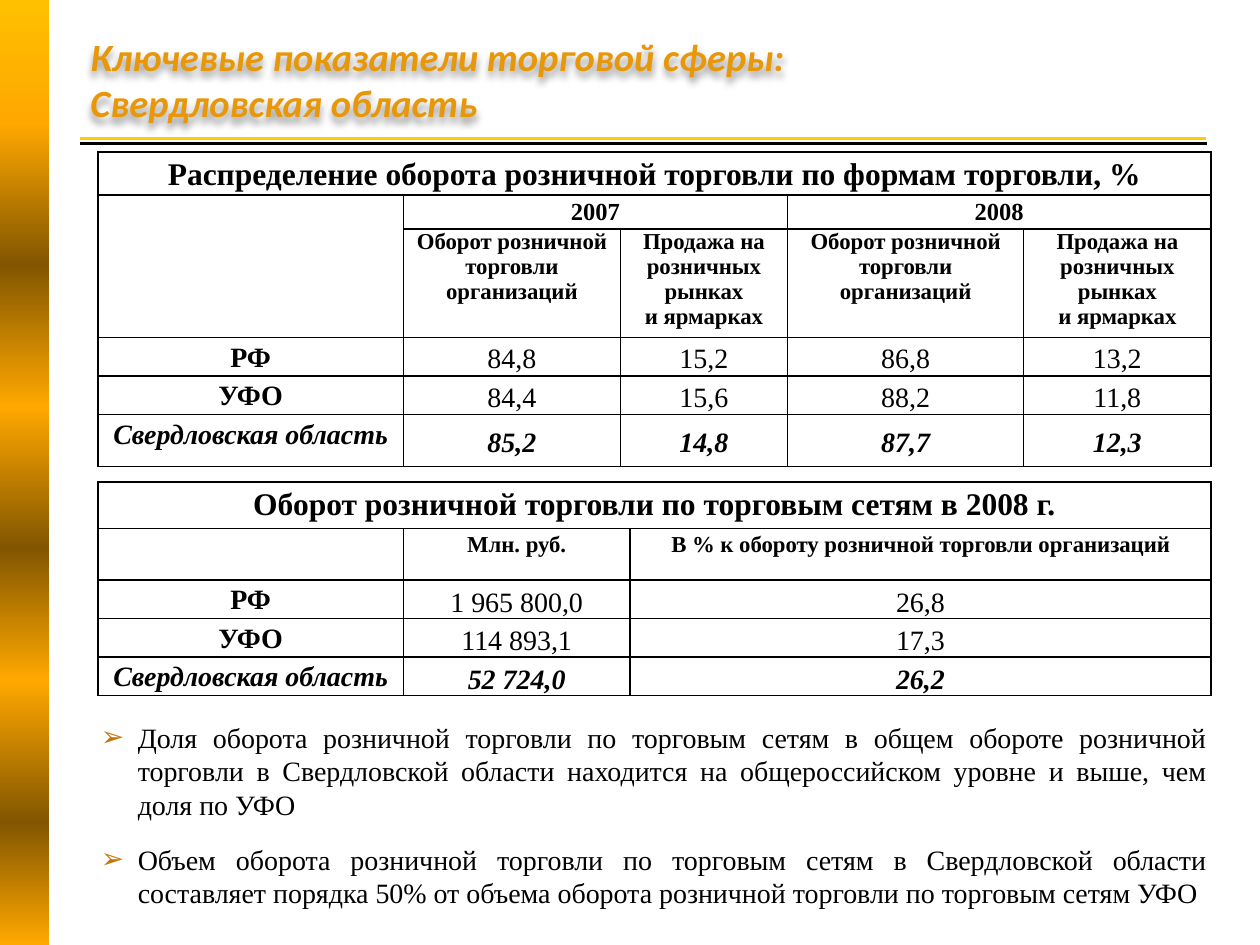
"""Build the slide on retail trade indicators of Sverdlovsk region."""
import pptx
import pptx.dml.color
import pptx.enum.shapes
import pptx.enum.text
import pptx.oxml.ns
import pptx.util
from dataclasses import dataclass
from lxml import etree

Pt = pptx.util.Pt
qn = pptx.oxml.ns.qn
rgb = pptx.dml.color.RGBColor.from_string
ANCHOR = pptx.enum.text.MSO_ANCHOR
ALIGN = pptx.enum.text.PP_ALIGN


@dataclass(frozen=True)
class Theme:
    ink: str = "000000"
    gold: str = "FFCC00"
    heading: str = "E79707"
    bullet: str = "C5750B"
    heading_font: str = "Calibri"
    text_font: str = "Times New Roman"
    heading_size: int = 22
    caption_size: int = 18
    year_size: int = 14
    column_size: int = 13
    text_size: int = 16


THEME = Theme()

HEADING = "Ключевые показатели торговой сферы: Свердловская область"
CONCLUSIONS = [
    "Доля оборота розничной торговли по торговым сетям в общем обороте розничной торговли "
    "в Свердловской области находится на общероссийском уровне и выше, чем доля по УФО",
    "Объем оборота розничной торговли по торговым сетям в Свердловской области составляет "
    "порядка 50% от объема оборота розничной торговли по торговым сетям УФО",
]
MARKETS = "Продажа на розничных рынках\vи ярмарках"
TABLES = [
    {
        "top": 87,
        "columns": [174.5, 124, 95.5, 135, 107],
        "merges": [(0, 0, 0, 4), (1, 0, 2, 0), (1, 1, 1, 2), (1, 3, 1, 4)],
        "value_anchor": ANCHOR.MIDDLE,
        "value_spacing": 1.15,
        "rows": [
            (24.5, "caption", ["Распределение оборота розничной торговли по формам торговли, %"]),
            (19.5, "year", ["", "2007", "", "2008"]),
            (62, "column", ["", "Оборот розничной торговли организаций", MARKETS,
                            "Оборот розничной торговли\vорганизаций", MARKETS]),
            (22, "region", ["РФ", "84,8", "15,2", "86,8", "13,2"]),
            (22, "region", ["УФО", "84,4", "15,6", "88,2", "11,8"]),
            (29.5, "focus", ["Свердловская область", "85,2", "14,8", "87,7", "12,3"]),
        ],
    },
    {
        "top": 275.5,
        "columns": [174.5, 129.5, 332],
        "merges": [(0, 0, 0, 2)],
        "value_anchor": ANCHOR.BOTTOM,
        "value_spacing": 1.0,
        "rows": [
            (26.5, "caption", ["Оборот розничной торговли по торговым сетям в 2008 г."]),
            (29.5, "wide_column", ["", "Млн. руб.", "В % к обороту розничной торговли организаций"]),
            (22, "region", ["РФ", "1 965 800,0", "26,8"]),
            (22, "region", ["УФО", "114 893,1", "17,3"]),
            (22, "focus", ["Свердловская область", "52 724,0", "26,2"]),
        ],
    },
]
ROW_STYLES = {
    "caption": (THEME.caption_size, 1.15),
    "year": (THEME.year_size, 1.15),
    "column": (THEME.column_size, 1.0),
    "wide_column": (THEME.column_size, 1.15),
    "region": (THEME.text_size, 1.15),
    "focus": (THEME.text_size, 1.15),
}
TABLE_LEFT = 56
RULES = [(THEME.ink, 82, 690), (THEME.gold, 79.25, 689)]
RIBBON = [(0, "FFC000"), (13, "FFA800"), (28, "825600"), (43, "FFA800"),
          (58, "825600"), (72, "FFA800"), (87, "825600"), (100, "FFA800")]


def add_color(parent, color):
    """Append a colour element and return it."""
    return etree.SubElement(parent, qn("a:srgbClr"), val=color)


def format_runs(paragraph, size, color, name, bold=False, italic=False):
    """Give every run of a paragraph the same font."""
    for run in paragraph.runs:
        run.font.size, run.font.name = Pt(size), name
        run.font.bold, run.font.italic = bold, italic
        run.font.color.rgb = rgb(color)


def place(shape, left, top, width, height):
    """Move and size a shape, in points."""
    shape.left, shape.top, shape.width, shape.height = map(Pt, (left, top, width, height))


def add_ribbon(slide):
    """Draw the gradient band along the left edge."""
    ribbon = slide.shapes.add_shape(pptx.enum.shapes.MSO_SHAPE.RECTANGLE, 0, 0, Pt(28), Pt(540))
    ribbon.shadow.inherit = False
    ribbon.line.fill.background()
    ribbon.fill.gradient()
    ribbon.fill.gradient_angle = 270
    stops = ribbon.element.spPr.find(".//" + qn("a:gsLst"))
    for stop in list(stops):
        stops.remove(stop)
    for percent, color in RIBBON:
        add_color(etree.SubElement(stops, qn("a:gs"), pos=str(percent * 1000)), color)


def add_rules(slide):
    """Draw the double rule under the heading."""
    for color, y, right in RULES:
        rule = slide.shapes.add_connector(
            pptx.enum.shapes.MSO_CONNECTOR.STRAIGHT, Pt(45.5), Pt(y), Pt(right), Pt(y))
        rule.line.color.rgb = rgb(color)
        rule.line.width = Pt(1.75)
        etree.SubElement(rule.element.spPr, qn("a:effectLst"))


def add_borders(cell):
    """Outline a cell with thin lines."""
    properties = cell._tc.get_or_add_tcPr()
    for side in ("lnL", "lnR", "lnT", "lnB"):
        border = etree.SubElement(properties, qn("a:" + side), w=str(Pt(1)))
        add_color(etree.SubElement(border, qn("a:solidFill")), THEME.ink)


def add_indicators(slide, content):
    """Add one table of indicators."""
    columns, rows = content["columns"], content["rows"]
    table = slide.shapes.add_table(
        len(rows), len(columns), Pt(TABLE_LEFT), Pt(content["top"]),
        Pt(sum(columns)), Pt(sum(height for height, _, _ in rows))).table
    table.first_row = table.horz_banding = False
    for column, width in zip(table.columns, columns):
        column.width = Pt(width)
    for r, (height, style, texts) in enumerate(rows):
        table.rows[r].height = Pt(height)
        size, spacing = ROW_STYLES[style]
        for c in range(len(columns)):
            cell = table.cell(r, c)
            is_value = style in ("region", "focus") and c > 0
            cell.margin_left = cell.margin_right = Pt(5)
            cell.margin_top = cell.margin_bottom = 0
            cell.vertical_anchor = content["value_anchor"] if is_value else ANCHOR.TOP
            add_borders(cell)
            cell.fill.background()
            if c < len(texts) and texts[c]:
                paragraph = cell.text_frame.paragraphs[0]
                paragraph.text = texts[c]
                paragraph.alignment = ALIGN.CENTER
                paragraph.line_spacing = content["value_spacing"] if is_value else spacing
                format_runs(paragraph, size, THEME.ink, THEME.text_font,
                            bold=style == "focus" or not is_value, italic=style == "focus")
    for top, left, bottom, right in content["merges"]:
        table.cell(top, left).merge(table.cell(bottom, right))


def fill_heading(heading):
    """Write the slide title with its soft shadow."""
    place(heading, 44.5, 11.5, 484, 67.5)
    frame = heading.text_frame
    frame.text = HEADING
    frame.word_wrap = True
    frame.auto_size = pptx.enum.text.MSO_AUTO_SIZE.NONE
    frame.vertical_anchor = ANCHOR.MIDDLE
    frame.paragraphs[0].alignment = ALIGN.LEFT
    format_runs(frame.paragraphs[0], THEME.heading_size, THEME.heading, THEME.heading_font, True, True)
    effects = etree.SubElement(heading.element.spPr, qn("a:effectLst"))
    shadow = etree.SubElement(effects, qn("a:outerShdw"), blurRad=str(Pt(4)), dist=str(Pt(3)),
                              dir="5400000", algn="t", rotWithShape="0")
    etree.SubElement(add_color(shadow, THEME.ink), qn("a:alpha"), val="40000")


def fill_conclusions(body):
    """Write the bulleted conclusions."""
    place(body, 50.5, 408, 646.5, 116)
    frame = body.text_frame
    frame.text = "\n".join(CONCLUSIONS)
    frame.word_wrap = True
    frame.auto_size = pptx.enum.text.MSO_AUTO_SIZE.NONE
    for index, paragraph in enumerate(frame.paragraphs):
        paragraph.alignment = ALIGN.JUSTIFY
        paragraph.space_before = Pt(6 if index else 0)
        paragraph.space_after = Pt(6)
        properties = paragraph._p.get_or_add_pPr()
        properties.set("marL", str(Pt(21)))
        properties.set("indent", str(-Pt(21)))
        add_color(etree.SubElement(properties, qn("a:buClr")), THEME.bullet)
        etree.SubElement(properties, qn("a:buChar"), char="➢")
        format_runs(paragraph, THEME.text_size, THEME.ink, THEME.text_font)


def main():
    """Assemble and save the slide."""
    deck = pptx.Presentation()
    deck.slide_width, deck.slide_height = Pt(720), Pt(540)
    slide = deck.slides.add_slide(deck.slide_layouts[1])
    add_rules(slide)
    add_ribbon(slide)
    for content in TABLES:
        add_indicators(slide, content)
    fill_conclusions(slide.placeholders[1])
    fill_heading(slide.shapes.title)
    deck.save("out.pptx")


if __name__ == "__main__":
    main()
